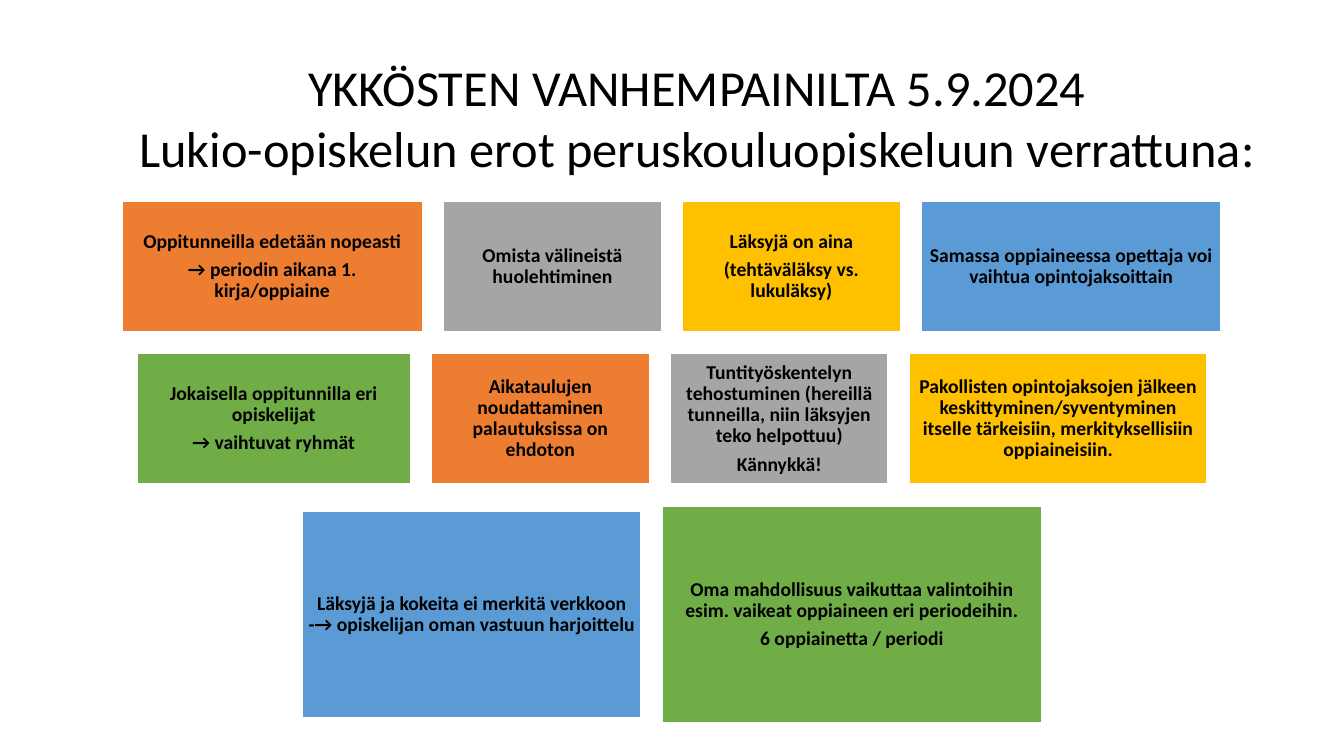
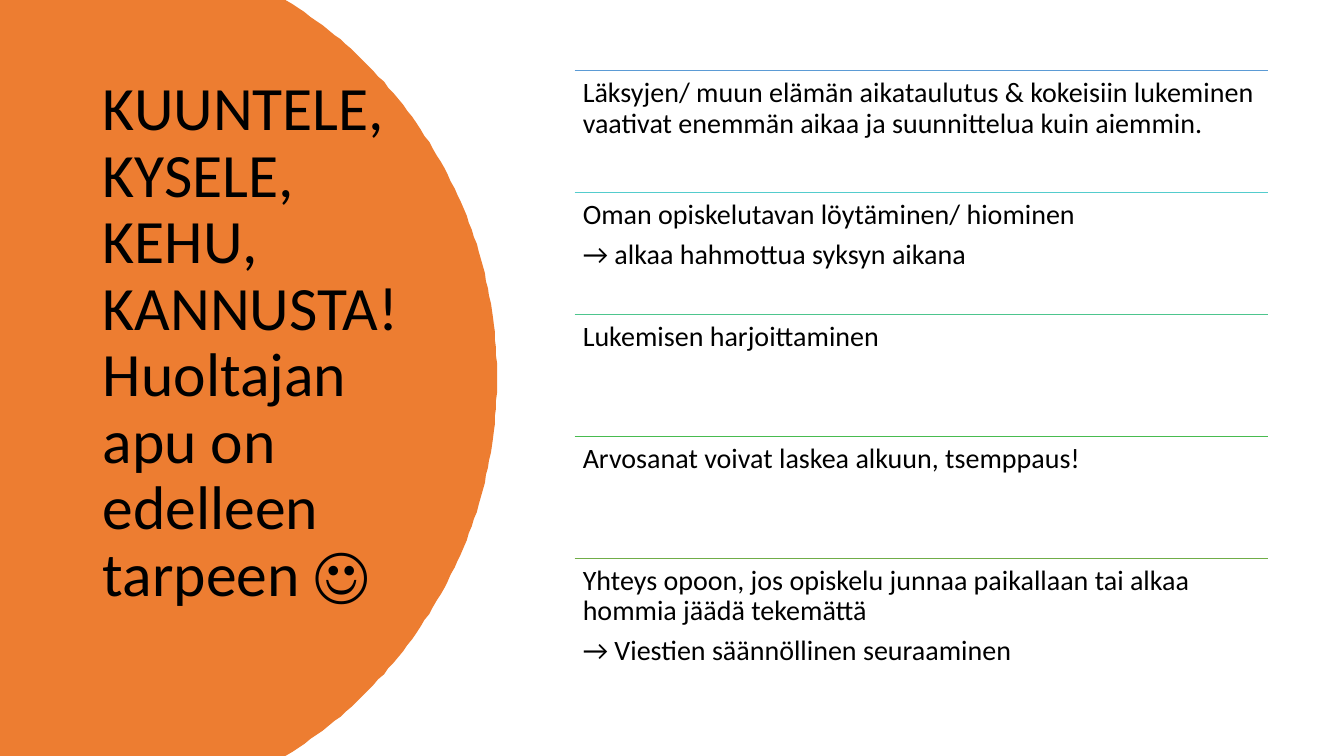
"""Build two slides for a parents' evening at an upper secondary school."""
from dataclasses import dataclass
from math import asin, cos, sin

from lxml.etree import SubElement
from pptx import Presentation
from pptx.dml.color import RGBColor
from pptx.enum.shapes import MSO_CONNECTOR as Connector, MSO_SHAPE as Shape
from pptx.enum.text import MSO_ANCHOR as Anchor, MSO_AUTO_SIZE as AutoSize, PP_ALIGN as Align
from pptx.oxml.ns import qn
from pptx.util import Pt


@dataclass(frozen=True)
class Theme:
    font: str = "Calibri"
    text: str = "000000"
    white: str = "FFFFFF"
    orange: str = "ED7D31"
    grey: str = "A5A5A5"
    yellow: str = "FFC000"
    blue: str = "5B9BD5"
    green: str = "70AD47"
    rules: tuple = ("5B9BD5", "54CCCD", "4DC58D", "48BB4F", "70AD47")
    headline_size: int = 36
    side_title_size: int = 44
    list_size: int = 20
    tile_size: int = 14


THEME = Theme()
PX = 9144
PAGE_WIDTH, PAGE_HEIGHT = 1333, 750


def write(box, lines, size, align=Align.LEFT, anchor=Anchor.TOP, inset=8, spacing=0.9, gap=0.35, bold=False):
    frame = box.text_frame
    frame.word_wrap = True
    frame.auto_size = AutoSize.NONE
    frame.vertical_anchor = anchor
    frame.margin_left = frame.margin_right = frame.margin_top = frame.margin_bottom = inset * PX
    frame.text = "\n".join(lines)
    for para in frame.paragraphs:
        para.alignment = align
        para.line_spacing = spacing
        para.space_after = Pt(round(size * gap))
        para.font.name = THEME.font
        para.font.size = Pt(size)
        para.font.bold = bold
        para.font.color.rgb = RGBColor.from_string(THEME.text)


def place_title(page, left, top, width, height, text, size, **style):
    title = page.shapes.title
    title.left, title.top, title.width, title.height = (n * PX for n in (left, top, width, height))
    write(title, [text], size, gap=0, **style)


deck = Presentation()
deck.slide_width, deck.slide_height = PAGE_WIDTH * PX, PAGE_HEIGHT * PX
title_only = deck.slide_layouts[5]

page = deck.slides.add_slide(title_only)
place_title(page, 92, 51, 1199, 145,
            "YKKÖSTEN VANHEMPAINILTA 5.9.2024\vLukio-opiskelun erot peruskouluopiskeluun verrattuna:",
            THEME.headline_size, align=Align.CENTER, inset=5, spacing=1.0)

tile_rows = [
    [
        (298, 129, THEME.orange, ["Oppitunneilla edetään nopeasti", "→ periodin aikana 1. kirja/oppiaine"]),
        (216, 129, THEME.grey, ["Omista välineistä huolehtiminen"]),
        (216, 129, THEME.yellow, ["Läksyjä on aina", "(tehtäväläksy vs. lukuläksy)"]),
        (297, 129, THEME.blue, ["Samassa oppiaineessa opettaja voi vaihtua opintojaksoittain"]),
    ],
    [
        (271, 129, THEME.green, ["Jokaisella oppitunnilla eri opiskelijat", "→ vaihtuvat ryhmät"]),
        (216, 129, THEME.orange, ["Aikataulujen noudattaminen palautuksissa on ehdoton"]),
        (216, 129, THEME.grey, [
            "Tuntityöskentelyn tehostuminen (hereillä tunneilla, niin läksyjen teko helpottuu)", "Kännykkä!"]),
        (295, 129, THEME.yellow, [
            "Pakollisten opintojaksojen jälkeen keskittyminen/syventyminen "
            "itselle tärkeisiin, merkityksellisiin oppiaineisiin."]),
    ],
    [
        (336, 205, THEME.blue, ["Läksyjä ja kokeita ei merkitä verkkoon -→ opiskelijan oman vastuun harjoittelu"]),
        (376, 215, THEME.green, [
            "Oma mahdollisuus vaikuttaa valintoihin esim. vaikeat oppiaineen eri periodeihin.",
            "6 oppiainetta / periodi"]),
    ],
]
TILE_GAP, ROW_GAP = 21, 22
row_top = 200
for row in tile_rows:
    row_height = max(height for _, height, _, _ in row)
    row_width = sum(width for width, _, _, _ in row) + TILE_GAP * (len(row) - 1)
    left = (PAGE_WIDTH - row_width) // 2
    for width, height, colour, lines in row:
        top = row_top + (row_height - height) // 2
        tile = page.shapes.add_shape(Shape.RECTANGLE, left * PX, top * PX, width * PX, height * PX)
        tile.shadow.inherit = False
        tile.fill.solid()
        tile.fill.fore_color.rgb = RGBColor.from_string(colour)
        tile.line.color.rgb = RGBColor.from_string(THEME.white)
        tile.line.width = Pt(1)
        write(tile, lines, THEME.tile_size, align=Align.CENTER, anchor=Anchor.MIDDLE, inset=6, bold=True)
        left += width + TILE_GAP
    row_top += row_height + ROW_GAP

page = deck.slides.add_slide(title_only)
ARC_CENTRE, ARC_RADIUS, ARC_STEPS = 53, 440, 120
half_height = PAGE_HEIGHT / 2
half_angle = asin(half_height / ARC_RADIUS)
angles = [half_angle * (2 * step / ARC_STEPS - 1) for step in range(ARC_STEPS + 1)]
arc = [(ARC_CENTRE + ARC_RADIUS * cos(angle), half_height + ARC_RADIUS * sin(angle)) for angle in angles]
outline = page.shapes.build_freeform(0, 0, scale=PX)
outline.add_line_segments(arc + [(0, PAGE_HEIGHT)], close=True)
side_panel = outline.convert_to_shape()
side_panel.shadow.inherit = False
side_panel.fill.solid()
side_panel.fill.fore_color.rgb = RGBColor.from_string(THEME.orange)
side_panel.line.fill.background()
page.shapes.element.append(page.shapes.title.element)
place_title(page, 92, 70, 323, 542,
            "KUUNTELE, KYSELE, KEHU, KANNUSTA!\vHuoltajan apu on edelleen\vtarpeen ☺",
            THEME.side_title_size, anchor=Anchor.MIDDLE, inset=10)

advice = [
    ["Läksyjen/ muun elämän aikataulutus & kokeisiin lukeminen vaativat enemmän aikaa ja suunnittelua kuin aiemmin."],
    ["Oman opiskelutavan löytäminen/ hiominen", "→ alkaa hahmottua syksyn aikana"],
    ["Lukemisen harjoittaminen"],
    ["Arvosanat voivat laskea alkuun, tsemppaus!"],
    ["Yhteys opoon, jos opiskelu junnaa paikallaan tai alkaa hommia jäädä tekemättä",
     "→ Viestien säännöllinen seuraaminen"],
]
LIST_LEFT, LIST_TOP, LIST_WIDTH, BAND_HEIGHT = 570, 70, 688, 121
for index, (colour, lines) in enumerate(zip(THEME.rules, advice)):
    top = LIST_TOP + index * BAND_HEIGHT
    rule = page.shapes.add_connector(
        Connector.STRAIGHT, LIST_LEFT * PX, top * PX, (LIST_LEFT + LIST_WIDTH) * PX, top * PX)
    rule.line.color.rgb = RGBColor.from_string(colour)
    rule.line.width = Pt(1)
    SubElement(rule.element.spPr, qn("a:effectLst"))
    band = page.shapes.add_textbox(LIST_LEFT * PX, top * PX, LIST_WIDTH * PX, BAND_HEIGHT * PX)
    write(band, lines, THEME.list_size)

deck.save("out.pptx")
